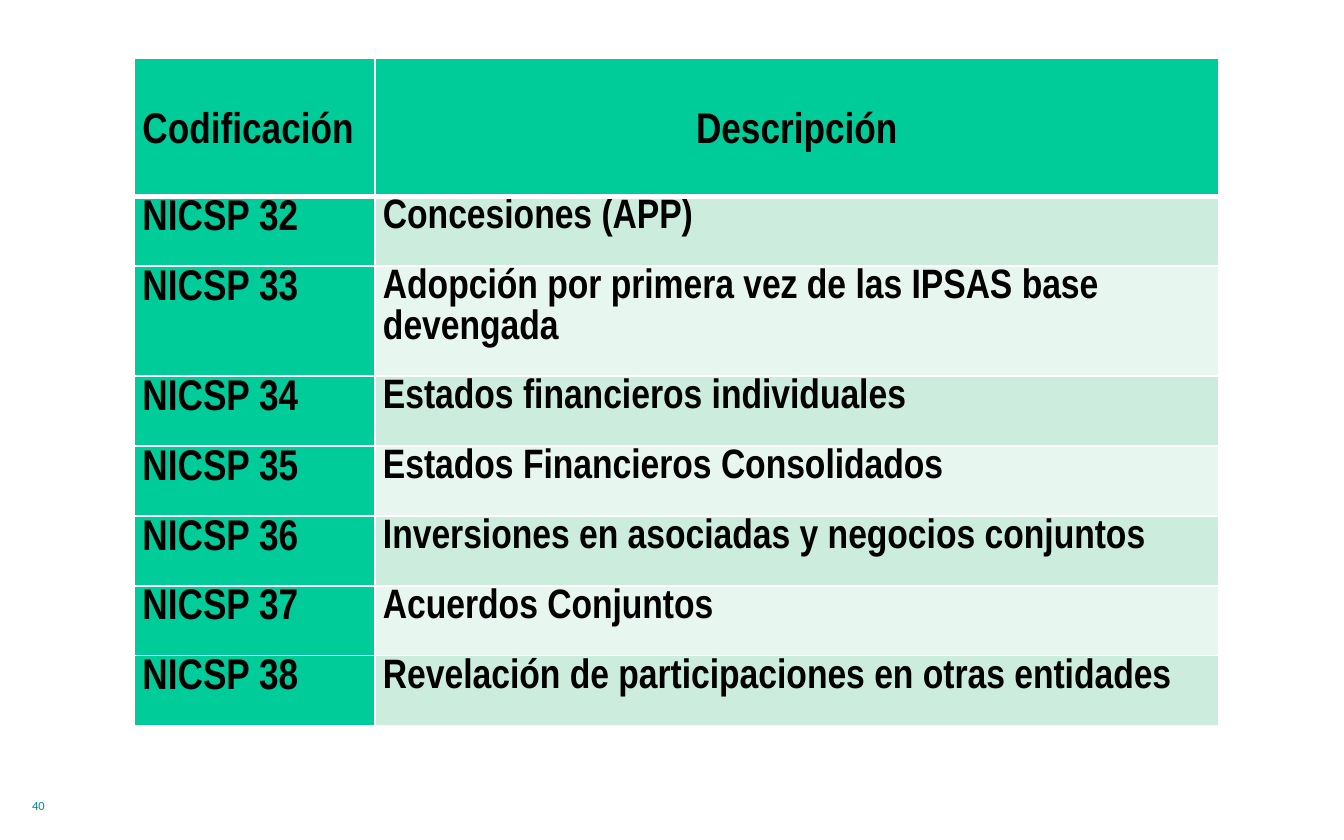
from lxml.etree import SubElement
from pptx import Presentation
from pptx.dml.color import RGBColor
from pptx.enum.text import MSO_ANCHOR as Anchor, PP_ALIGN as Align
from pptx.oxml.ns import qn
from pptx.util import Inches, Pt

GREEN, MINT, PALE = "00CC99", "CCECDE", "E7F6EF"
WHITE, BLACK, TEAL = "FFFFFF", "000000", "00918E"

HEADINGS = ("Codificación", "Descripción")
STANDARDS = [
    ("NICSP 32", "Concesiones (APP)"),
    ("NICSP 33", "Adopción por primera vez de las IPSAS base devengada"),
    ("NICSP 34", "Estados financieros individuales"),
    ("NICSP 35", "Estados Financieros Consolidados"),
    ("NICSP 36", "Inversiones en asociadas y negocios conjuntos"),
    ("NICSP 37", "Acuerdos Conjuntos"),
    ("NICSP 38", "Revelación de participaciones en otras entidades"),
]
COLUMN_WIDTHS = (1.79, 6.28)
HEADER_HEIGHT, ROW_HEIGHT, TALL_ROW_HEIGHT = 1.03, 0.52, 0.82
TALL_ROW = 2


def color(hex_code):
    return RGBColor.from_string(hex_code)


def set_font(para, name, size, hex_code, bold=False):
    font = para.font
    font.name, font.size, font.bold = name, Pt(size), bold
    font.color.rgb = color(hex_code)


def add_borders(cell, top=1, bottom=1):
    """White lines on all four sides, with widths in points."""
    properties = cell._tc.get_or_add_tcPr()
    for side, width in (("L", 1), ("R", 1), ("T", top), ("B", bottom)):
        line = SubElement(properties, qn(f"a:ln{side}"), w=str(Pt(width)))
        fill = SubElement(line, qn("a:solidFill"))
        SubElement(fill, qn("a:srgbClr"), val=WHITE)


def fill_cell(cell, text, size, background):
    cell.fill.solid()
    cell.fill.fore_color.rgb = color(background)
    cell.margin_left = cell.margin_right = Inches(0.06)
    cell.margin_top = cell.margin_bottom = 0
    para = cell.text_frame.paragraphs[0]
    para.text = text
    para.line_spacing = 1.07
    set_font(para, "Arial Narrow", size, BLACK, bold=True)
    return para


def add_standards_table(slide):
    heights = [HEADER_HEIGHT] + [ROW_HEIGHT] * len(STANDARDS)
    heights[TALL_ROW] = TALL_ROW_HEIGHT
    table = slide.shapes.add_table(
        len(heights), len(COLUMN_WIDTHS), Inches(1), Inches(0.43),
        Inches(sum(COLUMN_WIDTHS)), Inches(sum(heights))).table
    for column, width in zip(table.columns, COLUMN_WIDTHS):
        column.width = Inches(width)
    for row, height in zip(table.rows, heights):
        row.height = Inches(height)

    # Header row, with a thick line below it
    for index, heading in enumerate(HEADINGS):
        cell = table.cell(0, index)
        add_borders(cell, bottom=3)
        para = fill_cell(cell, heading, 23, GREEN)
        para.alignment = Align.CENTER if index else Align.LEFT
        cell.vertical_anchor = Anchor.MIDDLE
        cell.margin_top = Inches(0.06)

    # One row for each standard, in alternating tints
    for number, (code, description) in enumerate(STANDARDS, start=1):
        code_cell, description_cell = table.rows[number].cells
        for cell in (code_cell, description_cell):
            add_borders(cell, top=3 if number == 1 else 1)
        fill_cell(code_cell, code, 23, GREEN)
        fill_cell(description_cell, description, 22, MINT if number % 2 else PALE)


def add_page_number(slide, number):
    box = slide.shapes.add_textbox(Inches(0.14), Inches(5.89), Inches(2.08), Inches(0.3))
    box.text_frame.word_wrap = True
    para = box.text_frame.paragraphs[0]
    para.text = number
    set_font(para, "Calibri", 6.7, TEAL)


def main():
    deck = Presentation()
    deck.slide_width, deck.slide_height = Inches(10), Inches(6.25)
    slide = deck.slides.add_slide(deck.slide_layouts[6])
    add_page_number(slide, "40")
    add_standards_table(slide)
    deck.save("out.pptx")


if __name__ == "__main__":
    main()
